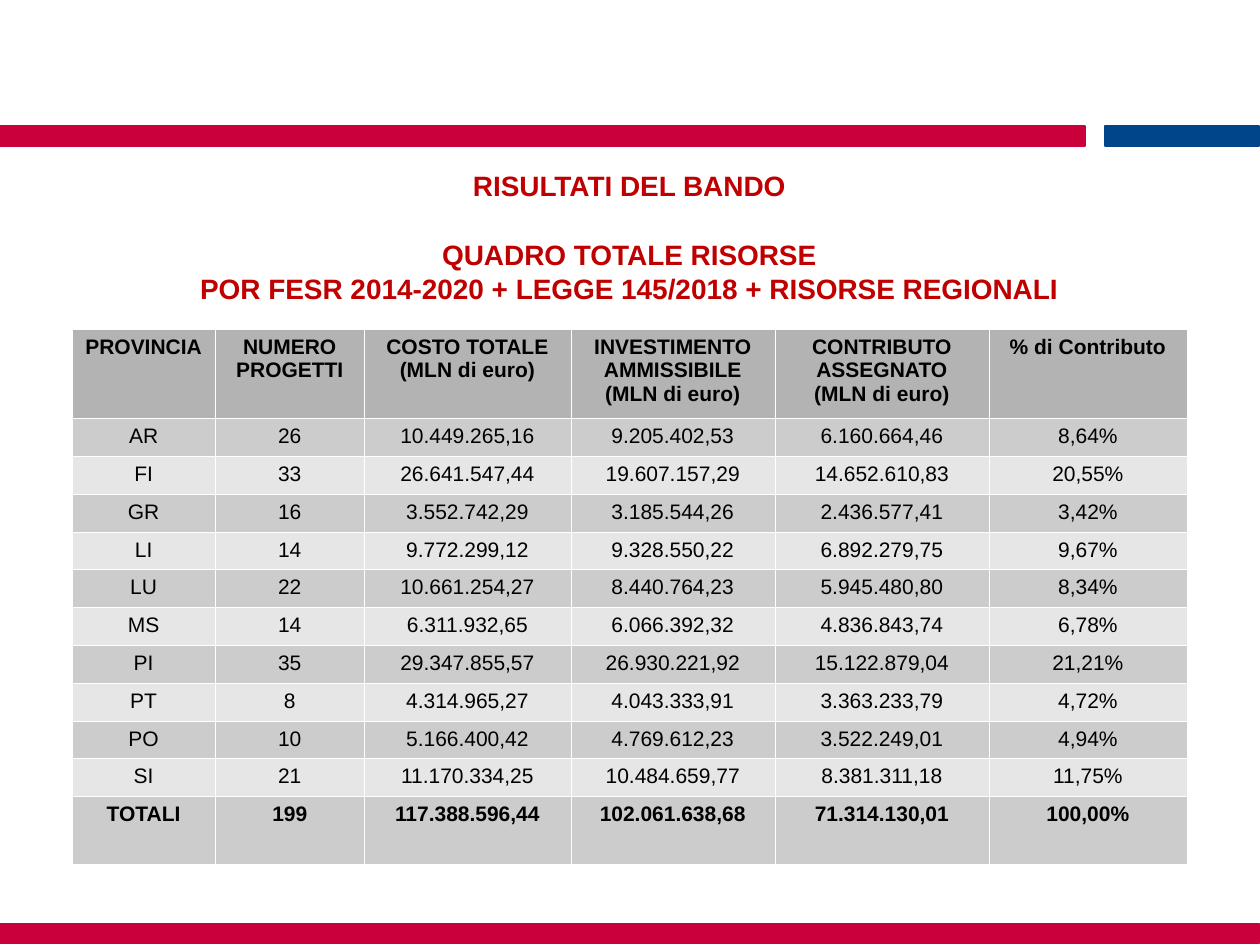
from lxml.etree import SubElement
from pptx import Presentation
from pptx.dml.color import RGBColor
from pptx.enum.shapes import MSO_SHAPE as Shape
from pptx.enum.text import MSO_ANCHOR as Anchor, MSO_AUTO_SIZE as AutoSize, PP_ALIGN as Align
from pptx.oxml.ns import qn
from pptx.util import Inches, Pt

RED, BLUE, TITLE_RED = "C90039", "004589", "C00000"
HEADER_GREY, DARK_GREY, LIGHT_GREY = "B3B3B3", "CCCCCC", "E6E6E6"

TITLE = [
    "RISULTATI DEL BANDO",
    "QUADRO TOTALE RISORSE",
    "POR FESR 2014-2020 + LEGGE 145/2018 + RISORSE REGIONALI",
]
COLUMN_WIDTHS = [1.14, 1.18, 1.64, 1.62, 1.7, 1.57]
ROW_HEIGHTS = [0.71] + [0.3] * 10 + [0.54]
ROWS = [
    ["PROVINCIA", "NUMERO PROGETTI", "COSTO TOTALE\n(MLN di euro)",
     "INVESTIMENTO AMMISSIBILE\n(MLN di euro)",
     "CONTRIBUTO ASSEGNATO\n(MLN di euro)", "% di Contributo"],
    ["AR", "26", "10.449.265,16", "9.205.402,53", "6.160.664,46", "8,64%"],
    ["FI", "33", "26.641.547,44", "19.607.157,29", "14.652.610,83", "20,55%"],
    ["GR", "16", "3.552.742,29", "3.185.544,26", "2.436.577,41", "3,42%"],
    ["LI", "14", "9.772.299,12", "9.328.550,22", "6.892.279,75", "9,67%"],
    ["LU", "22", "10.661.254,27", "8.440.764,23", "5.945.480,80", "8,34%"],
    ["MS", "14", "6.311.932,65", "6.066.392,32", "4.836.843,74", "6,78%"],
    ["PI", "35", "29.347.855,57", "26.930.221,92", "15.122.879,04", "21,21%"],
    ["PT", "8", "4.314.965,27", "4.043.333,91", "3.363.233,79", "4,72%"],
    ["PO", "10", "5.166.400,42", "4.769.612,23", "3.522.249,01", "4,94%"],
    ["SI", "21", "11.170.334,25", "10.484.659,77", "8.381.311,18", "11,75%"],
    ["TOTALI", "199", "117.388.596,44", "102.061.638,68", "71.314.130,01", "100,00%"],
]


def color(value):
    return RGBColor.from_string(value)


class SlideBuilder:
    """Keeps the font and the slide being filled."""

    def __init__(self, page, font_name="Arial"):
        self.page = page
        self.font_name = font_name

    def format(self, paragraph, size, shade, bold):
        paragraph.alignment = Align.CENTER
        font = paragraph.font
        font.name, font.size, font.bold = self.font_name, Pt(size), bold
        font.color.rgb = color(shade)

    def bar(self, left, top, width, shade):
        bar = self.page.shapes.add_shape(
            Shape.RECTANGLE, Inches(left), Inches(top), Inches(width), Inches(0.16))
        bar.shadow.inherit = False
        bar.fill.solid()
        bar.fill.fore_color.rgb = color(shade)
        bar.line.color.rgb = color(shade)
        bar.line.width = Pt(1)

    def title(self, lines, left, top, width, height):
        box = self.page.shapes.title
        box.left, box.top = Inches(left), Inches(top)
        box.width, box.height = Inches(width), Inches(height)
        frame = box.text_frame
        frame.text = "\n".join(lines)
        frame.word_wrap = True
        frame.auto_size = AutoSize.NONE
        frame.vertical_anchor = Anchor.TOP
        for paragraph in frame.paragraphs:
            paragraph.line_spacing = 1.04
            self.format(paragraph, 16, TITLE_RED, True)
        frame.paragraphs[1].space_before = Pt(19)
        # A hanging indent sets the long last line slightly left of centre.
        last = frame.paragraphs[-1]
        last._p.get_or_add_pPr().set("indent", str(Inches(-0.12)))

    def cell(self, cell, text, fill, bold):
        cell.text = text
        for paragraph in cell.text_frame.paragraphs:
            self.format(paragraph, 12, "000000", bold)
        properties = cell._tc.get_or_add_tcPr()
        for side in ("lnL", "lnR", "lnT", "lnB"):
            border = SubElement(properties, qn(f"a:{side}"), w=str(Pt(0.06)))
            SubElement(SubElement(border, qn("a:solidFill")), qn("a:srgbClr"), val="FFFFFF")
        cell.fill.solid()
        cell.fill.fore_color.rgb = color(fill)

    def table(self, rows, left, top, widths, heights):
        table = self.page.shapes.add_table(
            len(rows), len(widths), Inches(left), Inches(top),
            Inches(sum(widths)), Inches(sum(heights))).table
        table.first_row = table.horz_banding = False
        for column, width in zip(table.columns, widths):
            column.width = Inches(width)
        for index, (row, height) in enumerate(zip(rows, heights)):
            table.rows[index].height = Inches(height)
            fill = DARK_GREY if index % 2 else LIGHT_GREY
            if index == 0:
                fill = HEADER_GREY
            bold = index in (0, len(rows) - 1)
            for cell, text in zip(table.rows[index].cells, row):
                self.cell(cell, text, fill, bold)


def main():
    deck = Presentation()
    deck.slide_width, deck.slide_height = Inches(10), Inches(7.5)
    builder = SlideBuilder(deck.slides.add_slide(deck.slide_layouts[5]))
    builder.bar(0, 1, 8.61, RED)
    builder.bar(0, 7.33, 9.99, RED)
    builder.bar(8.77, 1, 1.22, BLUE)
    builder.title(TITLE, 0.35, 1.28, 9.29, 1.17)
    builder.table(ROWS, 0.57, 2.61, COLUMN_WIDTHS, ROW_HEIGHTS)
    deck.save("out.pptx")


if __name__ == "__main__":
    main()
